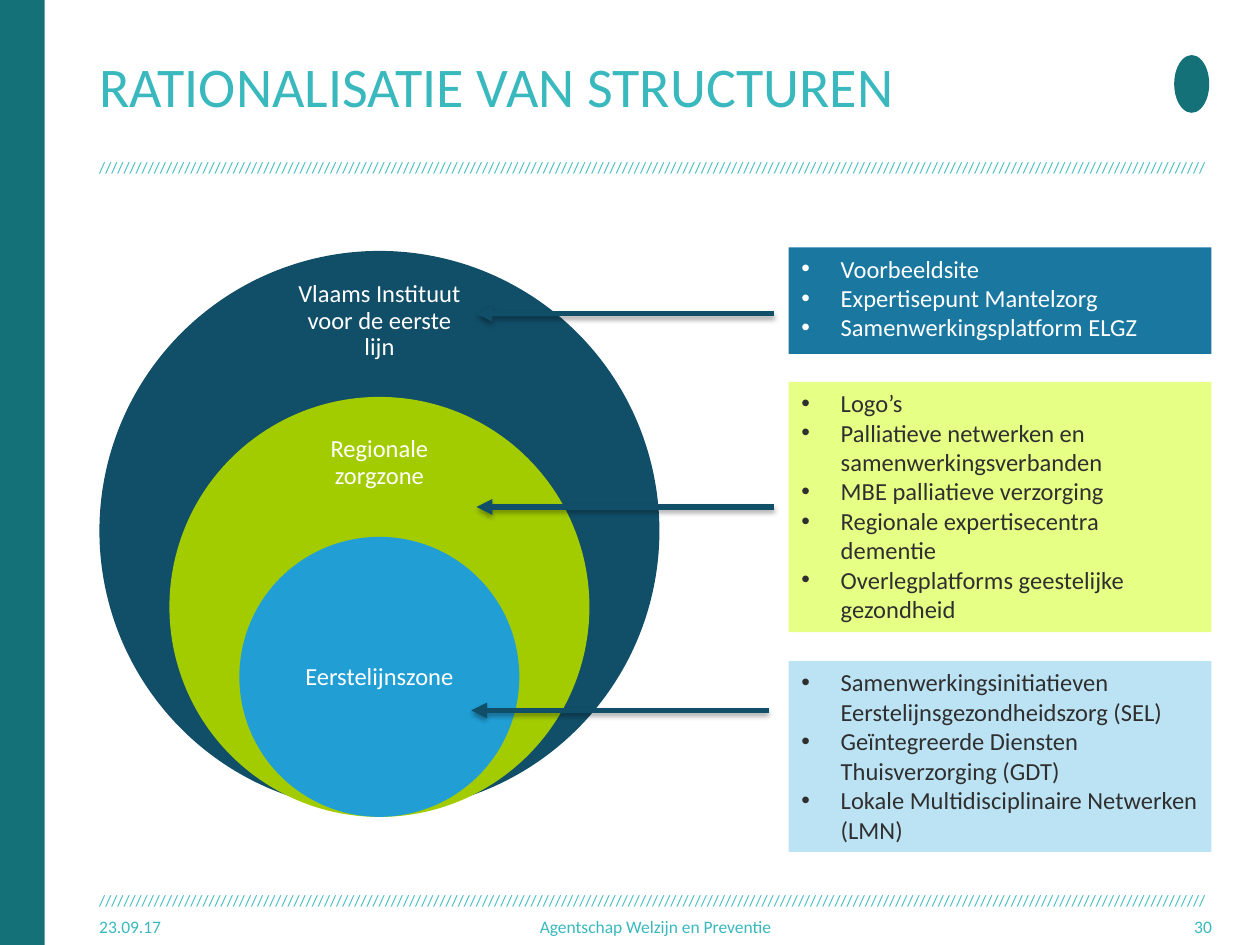
from lxml import etree
from pptx import Presentation
from pptx.dml.color import RGBColor
from pptx.enum.shapes import MSO_CONNECTOR as Connector, MSO_SHAPE as Shape
from pptx.enum.text import MSO_ANCHOR as Anchor, MSO_AUTO_SIZE as AutoSize, PP_ALIGN as Align
from pptx.oxml import parse_xml
from pptx.oxml.ns import nsdecls, qn
from pptx.util import Pt

WHITE = RGBColor(0xFF, 0xFF, 0xFF)
INK = RGBColor(0x2F, 0x2F, 0x2F)
TEAL = RGBColor(0x14, 0x71, 0x78)
AQUA = RGBColor(0x39, 0xB9, 0xBE)
NAVY = RGBColor(0x11, 0x4E, 0x68)
GREEN = RGBColor(0xA3, 0xCC, 0x00)
BLUE = RGBColor(0x21, 0x9F, 0xD5)
DEEP_BLUE = RGBColor(0x19, 0x77, 0xA0)
LIME = RGBColor(0xE6, 0xFF, 0x85)
PALE_BLUE = RGBColor(0xBC, 0xE3, 0xF4)

LEFT = 56.7
CENTRE = 216.8
INDENT = 22.5
SHADOW = (
    f'<a:effectLst {nsdecls("a")}><a:outerShdw blurRad="{Pt(3.1)}" dist="{Pt(1.8)}" '
    'dir="5400000" rotWithShape="0"><a:srgbClr val="000000"><a:alpha val="35000"/>'
    "</a:srgbClr></a:outerShdw></a:effectLst>"
)


def apply(target, values):
    """Set every attribute named in a dict of format values."""
    for name, value in values.items():
        setattr(target, name, value)


def place(shape, left, top, width, height):
    """Move and size a shape in points."""
    apply(shape, {"left": Pt(left), "top": Pt(top), "width": Pt(width), "height": Pt(height)})


def write(shape, lines, size, color, align=Align.LEFT, anchor=Anchor.MIDDLE, inset=0, spacing=1.0):
    """Fill a text frame with formatted paragraphs."""
    frame = shape.text_frame
    frame.text = "\n".join(lines)
    apply(frame, {"word_wrap": True, "auto_size": AutoSize.NONE, "vertical_anchor": anchor})
    apply(frame, {f"margin_{side}": Pt(inset) for side in ("left", "top", "right", "bottom")})
    for paragraph in frame.paragraphs:
        apply(paragraph, {"alignment": align, "line_spacing": spacing,
                          "space_before": Pt(0), "space_after": Pt(0)})
        for run in paragraph.runs:
            apply(run.font, {"name": "Calibri", "size": Pt(size), "bold": False})
            run.font.color.rgb = color


def add_text(slide, box, text, size, color, **layout):
    """Add a text box with one paragraph."""
    shape = slide.shapes.add_textbox(*map(Pt, box))
    write(shape, [text], size, color, **layout)


def add_plain(slide, kind, box, color):
    """Add a flat shape without outline or shadow."""
    shape = slide.shapes.add_shape(kind, *map(Pt, box))
    shape.shadow.inherit = False
    shape.fill.solid()
    shape.fill.fore_color.rgb = color
    shape.line.fill.background()


def add_circle(slide, top, diameter, color):
    """Add one nested circle on the shared vertical axis."""
    add_plain(slide, Shape.OVAL, (CENTRE - diameter / 2, top, diameter, diameter), color)


def fill_panel(panel, top, height, fill, color, items):
    """Turn a body placeholder into a coloured bullet panel."""
    place(panel, 450.7, top, 241.5, height)
    panel.fill.solid()
    panel.fill.fore_color.rgb = fill
    write(panel, items, 14, color, anchor=Anchor.TOP)
    apply(panel.text_frame, {"margin_left": Pt(7.2), "margin_right": Pt(7.2),
                             "margin_top": Pt(3.6), "margin_bottom": Pt(3.6)})
    for paragraph in panel.text_frame.paragraphs:
        properties = paragraph._p.get_or_add_pPr()
        properties.set("marL", str(Pt(INDENT)))
        properties.set("indent", str(-Pt(INDENT)))
        etree.SubElement(properties, qn("a:buFont"), typeface="Arial")
        etree.SubElement(properties, qn("a:buChar"), char="•")


def add_arrow(slide, start, y):
    """Add a leftward arrow with a soft shadow."""
    arrow = slide.shapes.add_connector(Connector.STRAIGHT, Pt(start), Pt(y), Pt(start - 170), Pt(y))
    arrow.line.width = Pt(3)
    arrow.line.color.rgb = NAVY
    etree.SubElement(arrow.line._get_or_add_ln(), qn("a:tailEnd"), type="triangle")
    arrow._element.spPr.append(parse_xml(SHADOW))


def main():
    """Build and save the slide."""
    presentation = Presentation()
    apply(presentation, {"slide_width": Pt(720), "slide_height": Pt(540)})
    slide = presentation.slides.add_slide(presentation.slide_layouts.get_by_name("Comparison"))
    title, *panels, spare = slide.placeholders
    spare._element.getparent().remove(spare._element)

    add_plain(slide, Shape.RECTANGLE, (0, 0, 25.5, 540), TEAL)
    add_plain(slide, Shape.OVAL, (671, 31.5, 20, 33), TEAL)
    for top in (90, 509):
        add_text(slide, (LEFT, top, 641, 18), "/" * 182, 9, AQUA, anchor=Anchor.TOP)

    place(title, LEFT, 9, 601, 79)
    write(title, ["RATIONALISATIE VAN STRUCTUREN"], 32, AQUA)

    circles = (
        (143.4, 320, NAVY, 159.7, 48, "Vlaams Instituut voor de eerste lijn"),
        (226.8, 240, GREEN, 242, 45, "Regionale zorgzone"),
        (306.8, 160, BLUE, 347, 80, "Eerstelijnszone"),
    )
    for top, diameter, color, label_top, label_height, label in circles:
        add_circle(slide, top, diameter, color)
        add_text(slide, (CENTRE - 56, label_top, 112, label_height), label, 14, WHITE,
                 align=Align.CENTER, inset=8, spacing=0.9)

    contents = (
        (141.3, 61, DEEP_BLUE, WHITE,
         ["Voorbeeldsite", "Expertisepunt Mantelzorg", "Samenwerkingsplatform ELGZ"]),
        (218.2, 143, LIME, INK,
         ["Logo’s", "Palliatieve netwerken en samenwerkingsverbanden",
          "MBE palliatieve verzorging", "Regionale expertisecentra dementie",
          "Overlegplatforms geestelijke gezondheid"]),
        (377.8, 109, PALE_BLUE, INK,
         ["Samenwerkingsinitiatieven Eerstelijnsgezondheidszorg (SEL)",
          "Geïntegreerde Diensten Thuisverzorging (GDT)",
          "Lokale Multidisciplinaire Netwerken (LMN)"]),
    )
    for panel, content in zip(panels, contents):
        fill_panel(panel, *content)
    for start, y in ((442.3, 179.3), (442.3, 289.7), (439.3, 406)):
        add_arrow(slide, start, y)

    footers = (
        (LEFT, 87, "23.09.17", Align.LEFT),
        (190, 369, "Agentschap Welzijn en Preventie", Align.CENTER),
        (604, 88.5, "30", Align.RIGHT),
    )
    for left, width, text, align in footers:
        add_text(slide, (left, 519, width, 21), text, 10, AQUA, align=align)

    presentation.save("out.pptx")


if __name__ == "__main__":
    main()
